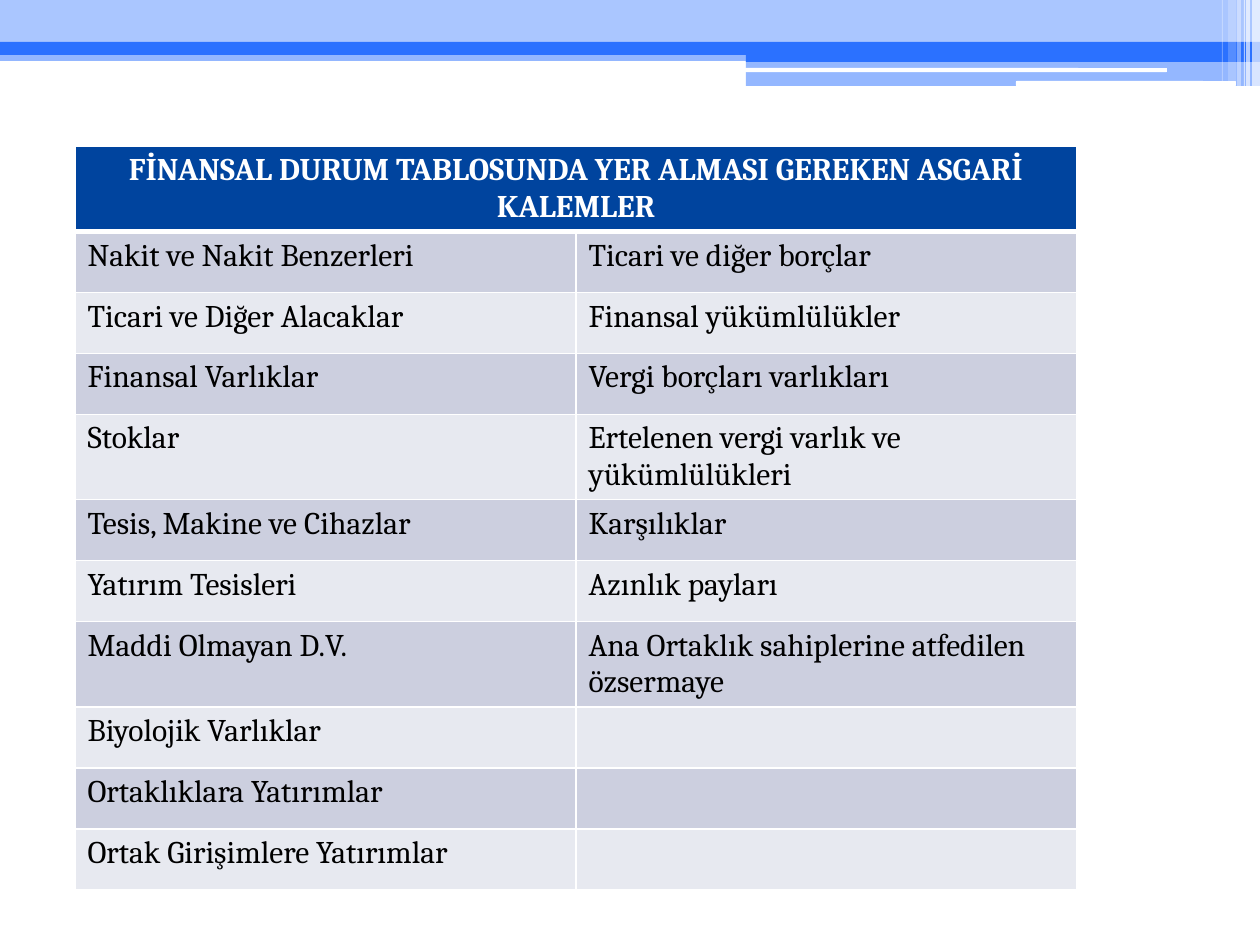
from lxml import etree
from pptx import Presentation
from pptx.dml.color import RGBColor
from pptx.enum.shapes import MSO_SHAPE
from pptx.enum.text import PP_ALIGN
from pptx.oxml.ns import qn
from pptx.util import Pt

RECTANGLE = MSO_SHAPE.RECTANGLE
ROUNDED = MSO_SHAPE.ROUNDED_RECTANGLE
CENTER = PP_ALIGN.CENTER
LEFT = PP_ALIGN.LEFT

EMU_PER_INCH = 914400
PX_PER_INCH = 126
BLUE, PALE_BLUE, WHITE, BLACK = "2B71FF", "AAC6FF", "FFFFFF", "000000"
HEADER_FILL = "00449E"
BAND_FILLS = ("CCCFDF", "E7E9F0")
FONT_NAME = "Cambria"
ROW_HEIGHT, TALL_ROW_HEIGHT = 61, 85

HEADING = "FİNANSAL DURUM TABLOSUNDA YER ALMASI GEREKEN ASGARİ KALEMLER"
ITEMS = [
    ("Nakit ve Nakit Benzerleri", "Ticari ve diğer borçlar"),
    ("Ticari ve Diğer Alacaklar", "Finansal yükümlülükler"),
    ("Finansal Varlıklar", "Vergi borçları varlıkları"),
    ("Stoklar", "Ertelenen vergi varlık ve yükümlülükleri"),
    ("Tesis, Makine ve Cihazlar", "Karşılıklar"),
    ("Yatırım Tesisleri", "Azınlık payları"),
    ("Maddi Olmayan D.V.", "Ana Ortaklık sahiplerine atfedilen özsermaye"),
    ("Biyolojik Varlıklar", ""),
    ("Ortaklıklara Yatırımlar", ""),
    ("Ortak Girişimlere Yatırımlar", ""),
]
TALL_ITEMS = {"Stoklar", "Maddi Olmayan D.V."}

BARS = [
    (RECTANGLE, 0, 50, 1260, 11, BLUE, 50),
    (RECTANGLE, 0, 0, 1260, 43, PALE_BLUE, 100),
    (RECTANGLE, 0, 42, 1260, 13, BLUE, 100),
    (RECTANGLE, 746, 49, 514, 13, BLUE, 100),
    (RECTANGLE, 746, 61, 514, 25, BLUE, 50),
    (ROUNDED, 745, 68, 422, 4, WHITE, 100),
    (ROUNDED, 1016, 81, 220, 5, WHITE, 100),
]
STRIPES = [
    (1252, 8, 86, 65),
    (1246, 4, 86, 65),
    (1244, 1, 86, 60),
    (1237, 4, 86, 40),
    (1228, 8, 81, 20),
    (1222, 1, 81, 30),
]


def px(length):
    return round(length * EMU_PER_INCH / PX_PER_INCH)


def color(value):
    return RGBColor.from_string(value)


def add_bar(slide, kind, left, top, width, height, fill, opacity):
    shape = slide.shapes.add_shape(kind, px(left), px(top), px(width), px(height))
    shape.shadow.inherit = False
    shape.line.fill.background()
    shape.fill.solid()
    shape.fill.fore_color.rgb = color(fill)
    if opacity < 100:
        fill_color = shape.fill._xPr.find(qn("a:solidFill"))[0]
        etree.SubElement(fill_color, qn("a:alpha"), val=str(opacity * 1000))


def add_banner(slide, left, top):
    for kind, x, y, width, height, fill, opacity in BARS:
        add_bar(slide, kind, left + x, top + y, width, height, fill, opacity)
    for x, width, height, opacity in STRIPES:
        add_bar(slide, RECTANGLE, left + x, top, width, height, WHITE, opacity)


def set_borders(cell, bottom_width):
    properties = cell._tc.get_or_add_tcPr()
    widths = {"a:lnL": 1, "a:lnR": 1, "a:lnT": 1, "a:lnB": bottom_width}
    for position, (tag, width) in enumerate(widths.items()):
        line = etree.Element(qn(tag), w=str(Pt(width)))
        fill = etree.SubElement(line, qn("a:solidFill"))
        etree.SubElement(fill, qn("a:srgbClr"), val=WHITE)
        properties.insert(position, line)


def format_cell(cell, text, fill, font_color, bold=False, alignment=LEFT, bottom_width=1):
    cell.text = text
    cell.fill.solid()
    cell.fill.fore_color.rgb = color(fill)
    set_borders(cell, bottom_width)
    paragraph = cell.text_frame.paragraphs[0]
    paragraph.alignment = alignment
    paragraph.font.name = FONT_NAME
    paragraph.font.size = Pt(18)
    paragraph.font.bold = bold
    paragraph.font.color.rgb = color(font_color)


def add_items_table(slide, left, top, width):
    heights = [TALL_ROW_HEIGHT] + [
        TALL_ROW_HEIGHT if asset in TALL_ITEMS else ROW_HEIGHT for asset, _ in ITEMS
    ]
    table = slide.shapes.add_table(
        len(heights), 2, px(left), px(top), px(width), px(sum(heights))
    ).table
    for row, height in zip(table.rows, heights):
        row.height = px(height)
    table.cell(0, 0).merge(table.cell(0, 1))
    for column, text in enumerate((HEADING, "")):
        format_cell(table.cell(0, column), text, HEADER_FILL, WHITE, True, CENTER, 3)
    for index, item in enumerate(ITEMS):
        for column, text in enumerate(item):
            fill = BAND_FILLS[index % 2]
            format_cell(table.cell(index + 1, column), text, fill, BLACK)


def main():
    presentation = Presentation()
    presentation.slide_width = px(1260)
    presentation.slide_height = px(945)
    slide = presentation.slides.add_slide(presentation.slide_layouts[6])
    add_banner(slide, 0, 0)
    add_items_table(slide, 75, 146, 1002)
    presentation.save("out.pptx")


if __name__ == "__main__":
    main()
